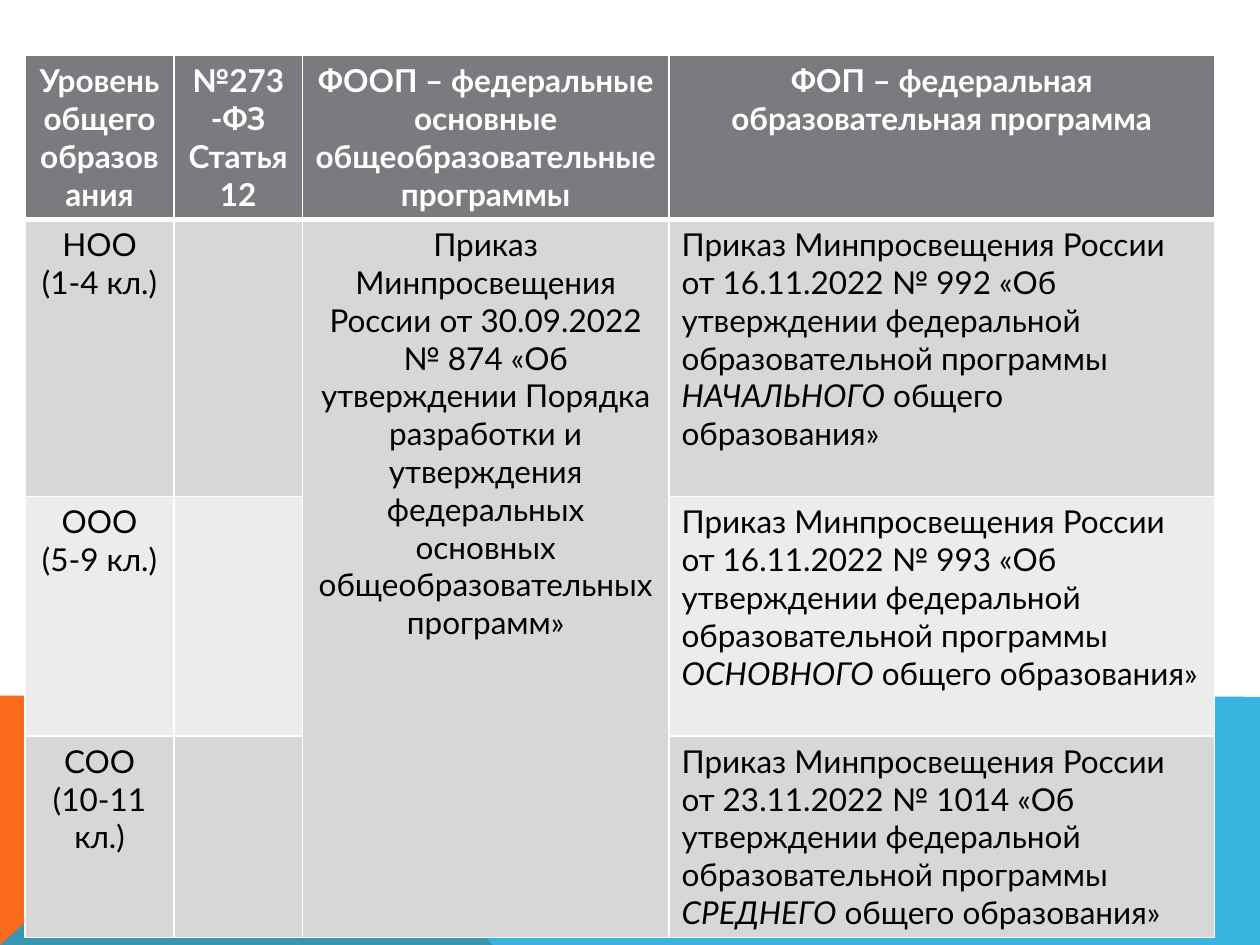
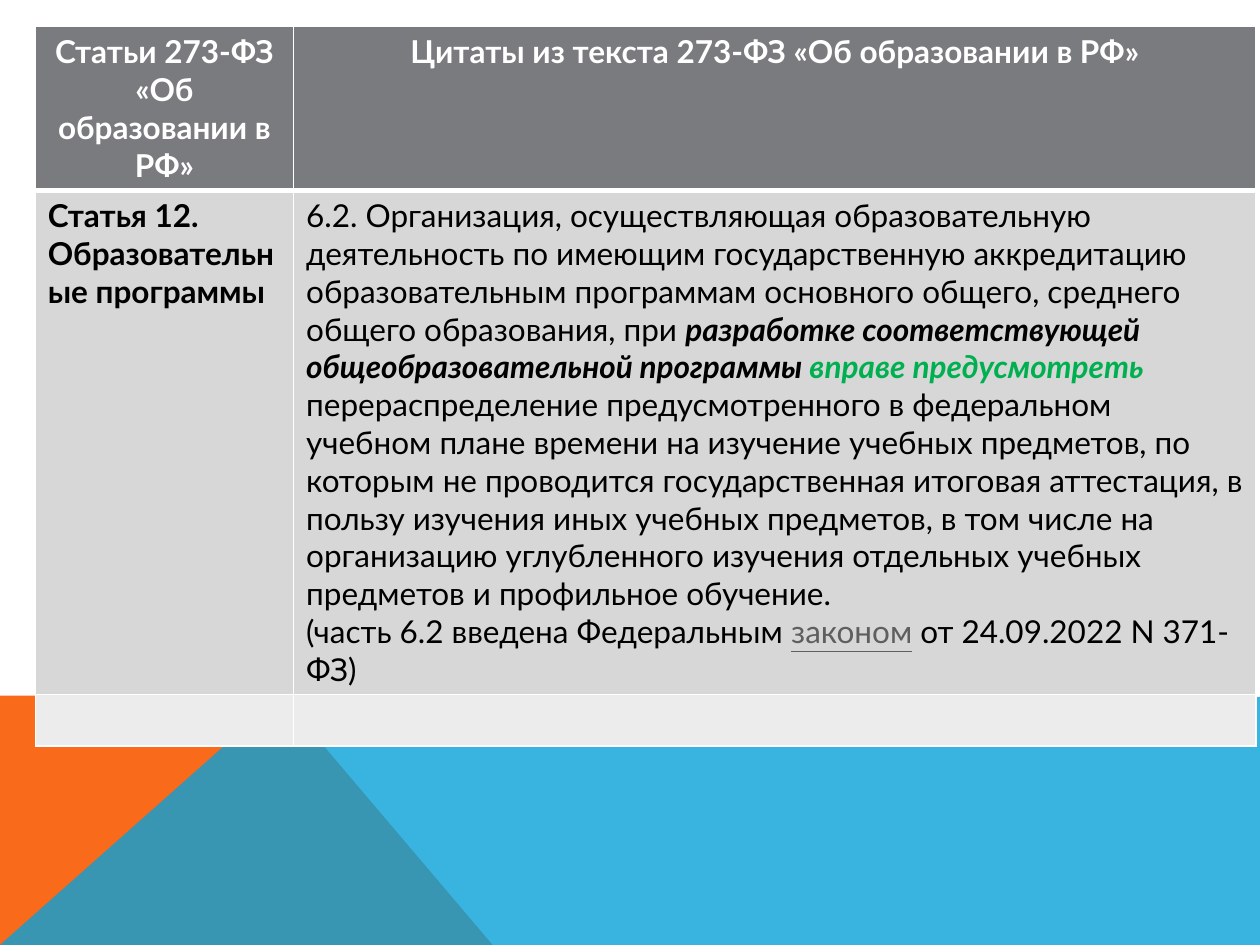
"""Build two slides with tables on federal education programmes."""
from dataclasses import dataclass

from lxml.etree import SubElement
from pptx import Presentation
from pptx.dml.color import RGBColor
from pptx.enum.text import PP_ALIGN as Align
from pptx.oxml.ns import qn
from pptx.util import Inches, Pt

COLS, ROWS = 100, 75
UNIT = Inches(10) // COLS
FONT, SIZE = "Lato", 18
WHITE, BLACK, GREY, GREEN, LINK = "FFFFFF", "000000", "797B7E", "00B050", "5F5F5F"
BANDS = ("D7D7D8", "ECECEC")
ORANGE, BLUE = "F96A1B", "08A1D9"
THIN, THICK = 1, 3


@dataclass(frozen=True)
class Run:
    text: str
    color: str = BLACK
    bold: bool = False
    italic: bool = False
    underline: bool = False


@dataclass(frozen=True)
class Cell:
    paragraphs: tuple = ()
    align: Align = Align.LEFT


@dataclass(frozen=True)
class Band:
    points: tuple
    color: str
    opacity: int = 100


@dataclass(frozen=True)
class Grid:
    left: float
    top: float
    widths: tuple
    heights: tuple
    cells: tuple
    merge: tuple = ()


def grid(n: float) -> int:
    """Turn grid columns or rows into a length."""
    return round(n * UNIT)


def rgb(color: str) -> RGBColor:
    """Turn a hex string into a colour."""
    return RGBColor.from_string(color)


def centred(*lines: str) -> Cell:
    """Make a centred cell with one plain paragraph a line."""
    return Cell(tuple((Run(line),) for line in lines), Align.CENTER)


def header(*lines: str) -> Cell:
    """Make a centred cell with bold white lines."""
    return Cell(tuple((Run(line, WHITE, bold=True),) for line in lines), Align.CENTER)


def order(date: str, number: int, level: str) -> Cell:
    """Make the cell that cites the order for one level of education."""
    lead = (f"Приказ Минпросвещения России от {date} № {number} "
            "«Об утверждении федеральной образовательной программы ")
    return Cell(((Run(lead), Run(level, italic=True), Run(" общего образования»")),))


FOOTER = (
    Band(((0, 75), (0, 55.2), (22.3, 55.2), (39.1, 75)), ORANGE),
    Band(((0, 75), (22.3, 55.2), (100, 55.3), (100, 75)), BLUE, 80),
)

ORDERS = Grid(
    left=2, top=4.4,
    widths=(11.8, 10.2, 29.1, 43.3), heights=(12.9, 22, 19, 16),
    cells=(
        (header("Уровень общего образования"),
         header("№273-ФЗ", "Статья 12"),
         header("ФООП – федеральные основные общеобразовательные программы"),
         header("ФОП – федеральная образовательная программа")),
        (centred("НОО", "(1-4 кл.)"), Cell(),
         centred("Приказ Минпросвещения России от 30.09.2022 № 874 «Об утверждении "
                 "Порядка разработки и утверждения федеральных основных "
                 "общеобразовательных программ»"),
         order("16.11.2022", 992, "НАЧАЛЬНОГО")),
        (centred("ООО", "(5-9 кл.)"), Cell(), Cell(),
         order("16.11.2022", 993, "ОСНОВНОГО")),
        (centred("СОО", "(10-11 кл.)"), Cell(), Cell(),
         order("23.11.2022", 1014, "СРЕДНЕГО")),
    ),
    merge=((1, 2), (3, 2)),
)

QUOTES = Grid(
    left=2.8, top=2.1,
    widths=(20.5, 76.4), heights=(12.9, 40, 4.1),
    cells=(
        (header("Статьи 273-ФЗ «Об образовании в РФ»"),
         header("Цитаты из текста 273-ФЗ «Об образовании в РФ»")),
        (Cell(((Run("Статья 12. Образовательные программы", bold=True),),)),
         Cell((
             (Run("6.2. Организация, осуществляющая образовательную деятельность по "
                  "имеющим государственную аккредитацию образовательным программам "
                  "основного общего, среднего общего образования, при "),
              Run("разработке соответствующей общеобразовательной программы ",
                  bold=True, italic=True),
              Run("вправе предусмотреть ", GREEN, bold=True, italic=True),
              Run("перераспределение предусмотренного в федеральном учебном плане "
                  "времени на изучение учебных предметов, по которым не проводится "
                  "государственная итоговая аттестация, в пользу изучения иных "
                  "учебных предметов, в том числе на организацию углубленного "
                  "изучения отдельных учебных предметов и профильное обучение.")),
             (Run("(часть 6.2 введена Федеральным "),
              Run("законом", LINK, underline=True),
              Run(" от 24.09.2022 N 371-ФЗ)")),
         ))),
        (Cell(), Cell()),
    ),
)


def draw_band(s, band: Band) -> None:
    """Draw one coloured outline of the footer."""
    points = [(grid(x), grid(y)) for x, y in band.points]
    builder = s.shapes.build_freeform(*points[0], scale=1.0)
    builder.add_line_segments(points[1:], close=True)
    sp = builder.convert_to_shape()
    sp.shadow.inherit = False
    sp.line.fill.background()
    sp.fill.solid()
    sp.fill.fore_color.rgb = rgb(band.color)
    if band.opacity < 100:
        color = next(sp.element.spPr.iter(qn("a:srgbClr")))
        SubElement(color, qn("a:alpha"), val=str(band.opacity * 1000))


def set_borders(cell, top: int, bottom: int) -> None:
    """Give a table cell white borders."""
    tc_pr = cell._tc.get_or_add_tcPr()
    sides = (("L", THIN), ("R", THIN), ("T", top), ("B", bottom))
    for i, (side, width) in enumerate(sides):
        ln = SubElement(tc_pr, qn(f"a:ln{side}"), w=str(Pt(width)))
        fill = SubElement(ln, qn("a:solidFill"))
        SubElement(fill, qn("a:srgbClr"), val=WHITE)
        tc_pr.insert(i, ln)


def write_cell(tf, content: Cell) -> None:
    """Write the paragraphs and runs of a cell."""
    for i, runs in enumerate(content.paragraphs):
        p = tf.add_paragraph() if i else tf.paragraphs[0]
        p.alignment = content.align
        for run in runs:
            r = p.add_run()
            r.text = run.text
            font = r.font
            font.name, font.size = FONT, Pt(SIZE)
            font.color.rgb = rgb(run.color)
            font.bold, font.italic = run.bold, run.italic
            font.underline = run.underline


def draw_table(s, spec: Grid) -> None:
    """Draw a table with a grey header and banded rows."""
    table = s.shapes.add_table(
        len(spec.heights), len(spec.widths), grid(spec.left), grid(spec.top),
        grid(sum(spec.widths)), grid(sum(spec.heights))).table
    for column, width in zip(table.columns, spec.widths):
        column.width = grid(width)
    for row, height in zip(table.rows, spec.heights):
        row.height = grid(height)
    if spec.merge:
        first, last = spec.merge
        table.cell(*first).merge(table.cell(*last))
    for i, contents in enumerate(spec.cells):
        for j, content in enumerate(contents):
            cell = table.cell(i, j)
            cell.fill.solid()
            cell.fill.fore_color.rgb = rgb(BANDS[(i - 1) % 2] if i else GREY)
            set_borders(cell, THICK if i == 1 else THIN, THIN if i else THICK)
            write_cell(cell.text_frame, content)


def main() -> None:
    """Build and save the presentation."""
    prs = Presentation()
    prs.slide_width, prs.slide_height = grid(COLS), grid(ROWS)
    for spec in (ORDERS, QUOTES):
        s = prs.slides.add_slide(prs.slide_layouts[6])
        for band in FOOTER:
            draw_band(s, band)
        draw_table(s, spec)
    prs.save("out.pptx")


if __name__ == "__main__":
    main()
